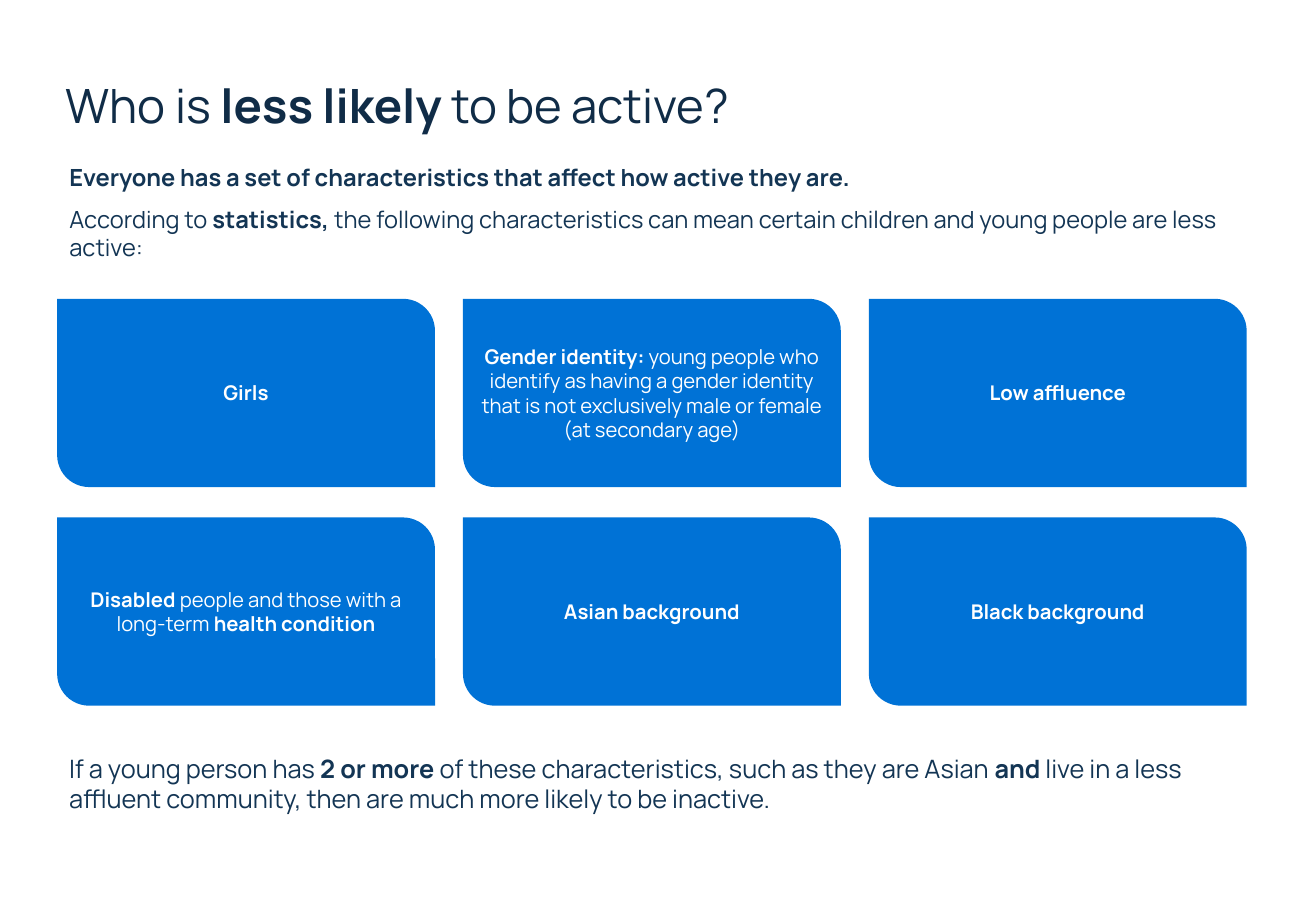
from lxml import etree
from pptx import Presentation
from pptx import util as u
from pptx.dml.color import RGBColor
from pptx.enum import shapes, text
from pptx.oxml.ns import qn

COLOURS = {"title": "102C47", "body": "133554", "card": "0072D6", "label": "FFFFFF"}

deck = Presentation()
deck.slide_width, deck.slide_height = u.Inches(10.83), u.Inches(7.5)
page = deck.slides.add_slide(deck.slide_layouts[1])


def place(box, left, top, width, height):
    box.left, box.top = u.Inches(left), u.Inches(top)
    box.width, box.height = u.Inches(width), u.Inches(height)


def write(box, paragraphs, size, colour, align, anchor, margins, after=0):
    frame = box.text_frame
    frame.word_wrap = True
    frame.auto_size = text.MSO_AUTO_SIZE.NONE
    frame.vertical_anchor = anchor
    frame.margin_left = frame.margin_right = u.Inches(margins[0])
    frame.margin_top = frame.margin_bottom = u.Inches(margins[1])
    for number, spans in enumerate(paragraphs):
        para = frame.add_paragraph() if number else frame.paragraphs[0]
        para.alignment = align
        para.space_before, para.space_after = u.Pt(0), u.Pt(after)
        para.font.name, para.font.size = "Manrope", u.Pt(size)
        para.font.color.rgb = RGBColor.from_string(COLOURS[colour])
        for words, bold in spans:
            span = para.add_run()
            span.text, span.font.bold = words, bold


LEFT, CENTRE = text.PP_ALIGN.LEFT, text.PP_ALIGN.CENTER
TOP, MIDDLE = text.MSO_ANCHOR.TOP, text.MSO_ANCHOR.MIDDLE

title = page.shapes.title
place(title, 0.46, 0.59, 6.45, 0.55)
write(title, [[("Who is ", False), ("less likely", True), (" to be active?", False)]],
      28, "title", LEFT, TOP, (0.08, 0.04))

intro = page.placeholders[1]
place(intro, 0.47, 1.29, 9.72, 0.92)
write(intro, [
    [("Everyone has a set of characteristics that affect how active they are.", True)],
    [("According to ", False), ("statistics, ", True),
     ("the following characteristics can mean certain children and young people "
      "are less active:", False)],
], 14, "body", LEFT, TOP, (0.1, 0.05), after=8)
for para in intro.text_frame.paragraphs:
    properties = para._p.get_or_add_pPr()
    properties.set("marL", "0")
    properties.set("indent", "0")
    etree.SubElement(properties, qn("a:buNone"))

cards = [
    [("Girls", True)],
    [("Gender identity: ", True),
     ("young people who identify as having a gender identity that is not "
      "exclusively male or female (at secondary age)", False)],
    [("Low affluence", True)],
    [("Disabled ", True), ("people and those with a long-term", False),
     (" health condition", True)],
    [("Asian background", True)],
    [("Black background", True)],
]
for number, spans in enumerate(cards):
    row, column = divmod(number, 3)
    card = page.shapes.add_shape(shapes.MSO_SHAPE.ROUND_2_DIAG_RECTANGLE, 0, 0, 0, 0)
    place(card, 0.47 + 3.34 * column, 2.46 + 1.8 * row, 3.11, 1.55)
    card.adjustments[0], card.adjustments[1] = 0, 0.17
    card.shadow.inherit = False
    card.fill.solid()
    card.fill.fore_color.rgb = RGBColor.from_string(COLOURS["card"])
    card.line.fill.background()
    write(card, [spans], 12, "label", CENTRE, MIDDLE, (0.03, 0.05))

summary = page.shapes.add_textbox(0, 0, 0, 0)
place(summary, 0.47, 6.15, 9.64, 0.61)
write(summary, [[
    ("If a young person has", False), (" 2 or more", True),
    (" of these characteristics, such as they are Asian ", False), ("and", True),
    (" live in a less affluent community, then are much more likely to be inactive.", False),
]], 15, "body", LEFT, TOP, (0.1, 0.05))

deck.save("out.pptx")
